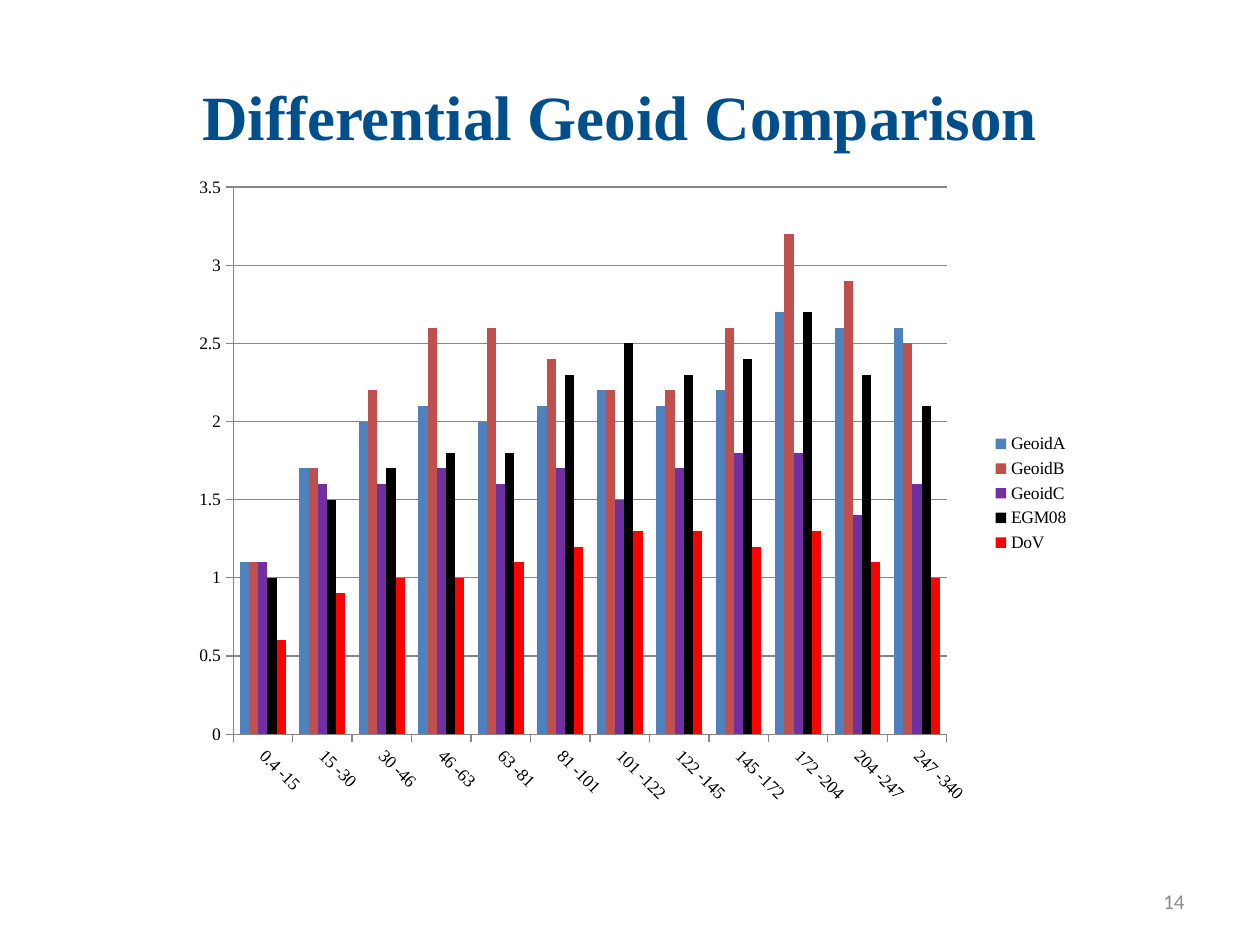
from dataclasses import dataclass

from lxml.etree import SubElement
from pptx import Presentation
from pptx.chart.data import CategoryChartData
from pptx.dml.color import RGBColor
from pptx.enum.chart import XL_CHART_TYPE as ChartType
from pptx.enum.chart import XL_LEGEND_POSITION as LegendPosition
from pptx.enum.chart import XL_TICK_MARK as TickMark
from pptx.enum.text import MSO_ANCHOR as Anchor
from pptx.enum.text import PP_ALIGN as Align
from pptx.oxml.ns import qn
from pptx.util import Pt

PX = 9144  # EMU per px, 100 px to the inch


@dataclass(frozen=True)
class Theme:
    serif: str = "Times New Roman"
    sans: str = "Calibri"
    title: str = "004F8A"
    number: str = "898989"
    text: str = "000000"
    grid: str = "868686"
    title_size: int = 36
    number_size: int = 12
    chart_size: int = 10


THEME = Theme()


def place(shape, left, top, width, height):
    box = {"left": left, "top": top, "width": width, "height": height}
    for name, value in box.items():
        setattr(shape, name, value * PX)


def write(shape, text, align, color, font_format):
    """Fill a shape with one vertically centred paragraph."""
    frame = shape.text_frame
    frame.word_wrap = True
    frame.vertical_anchor = Anchor.MIDDLE
    paragraph = frame.paragraphs[0]
    paragraph.alignment = align
    run = paragraph.add_run()
    run.text = text
    run.font.color.rgb = RGBColor.from_string(color)
    for name, value in font_format.items():
        setattr(run.font, name, value)


presentation = Presentation()
presentation.slide_width = 1000 * PX
presentation.slide_height = 750 * PX
slide = presentation.slides.add_slide(presentation.slide_layouts[5])

# Title and slide number
title = slide.shapes.title
place(title, 42, 50, 900, 83)
write(title, "Differential Geoid Comparison", Align.CENTER, THEME.title,
      {"name": THEME.serif, "size": Pt(THEME.title_size), "bold": True})

slide_number = slide.shapes.add_textbox(0, 0, PX, PX)
place(slide_number, 717, 695, 233, 40)
write(slide_number, "14", Align.RIGHT, THEME.number,
      {"name": THEME.sans, "size": Pt(THEME.number_size)})

# Chart data
limits = ["0.4", "15", "30", "46", "63", "81", "101", "122", "145", "172",
          "204", "247", "340"]
series_values = {
    "GeoidA": ("4F81BD", [1.1, 1.7, 2, 2.1, 2, 2.1, 2.2, 2.1, 2.2, 2.7, 2.6, 2.6]),
    "GeoidB": ("C0504D", [1.1, 1.7, 2.2, 2.6, 2.6, 2.4, 2.2, 2.2, 2.6, 3.2, 2.9, 2.5]),
    "GeoidC": ("7030A0", [1.1, 1.6, 1.6, 1.7, 1.6, 1.7, 1.5, 1.7, 1.8, 1.8, 1.4, 1.6]),
    "EGM08": ("000000", [1, 1.5, 1.7, 1.8, 1.8, 2.3, 2.5, 2.3, 2.4, 2.7, 2.3, 2.1]),
    "DoV": ("FF0000", [0.6, 0.9, 1, 1, 1.1, 1.2, 1.3, 1.3, 1.2, 1.3, 1.1, 1]),
}
chart_data = CategoryChartData()
chart_data.categories = [f"{low} -{high}" for low, high in zip(limits, limits[1:])]
for name, (color, values) in series_values.items():
    chart_data.add_series(name, values)

chart_frame = slide.shapes.add_chart(
    ChartType.COLUMN_CLUSTERED, 142 * PX, 133 * PX, 717 * PX, 517 * PX, chart_data)
chart = chart_frame.chart
chart.has_title = False
chart.font.name = THEME.serif
chart.font.size = Pt(THEME.chart_size)
chart.font.color.rgb = RGBColor.from_string(THEME.text)

# Columns
plot = chart.plots[0]
plot.gap_width = 150
plot.overlap = 0
plot.vary_by_categories = False
for series, (color, values) in zip(plot.series, series_values.values()):
    series.format.fill.solid()
    series.format.fill.fore_color.rgb = RGBColor.from_string(color)

# Axes
category_axis, value_axis = chart.category_axis, chart.value_axis
value_format = {"minimum_scale": 0, "maximum_scale": 3.5, "major_unit": 0.5,
                "has_major_gridlines": True}
for name, value in value_format.items():
    setattr(value_axis, name, value)
for axis in (category_axis, value_axis):
    axis.major_tick_mark = TickMark.OUTSIDE
    axis.minor_tick_mark = TickMark.NONE
    axis.tick_labels.number_format = "General"
    axis.tick_labels.number_format_is_linked = False
for line in (category_axis.format.line, value_axis.format.line,
             value_axis.major_gridlines.format.line):
    line.color.rgb = RGBColor.from_string(THEME.grid)
    line.width = Pt(0.75)

# Category labels slope down at 45 degrees
category_font = category_axis.tick_labels.font
category_font.size = Pt(THEME.chart_size)
category_font.name = THEME.serif
category_text = category_axis._element.find(qn("c:txPr"))
category_text.find(qn("a:bodyPr")).set("rot", str(45 * 60000))

# Legend
chart.has_legend = True
chart.legend.position = LegendPosition.RIGHT
chart.legend.include_in_layout = False

# Plot area, as shares of the chart frame
plot_area = chart._chartSpace.chart.plotArea
layout = plot_area.find(qn("c:layout"))
if layout is None:
    layout = SubElement(plot_area, qn("c:layout"))
    plot_area.insert(0, layout)
manual = SubElement(layout, qn("c:manualLayout"))
plot_layout = {"layoutTarget": "inner", "xMode": "edge", "yMode": "edge",
               "x": 0.06, "y": 0.03, "w": 0.79, "h": 0.84}
for name, value in plot_layout.items():
    SubElement(manual, qn(f"c:{name}")).set("val", str(value))

presentation.save("out.pptx")
